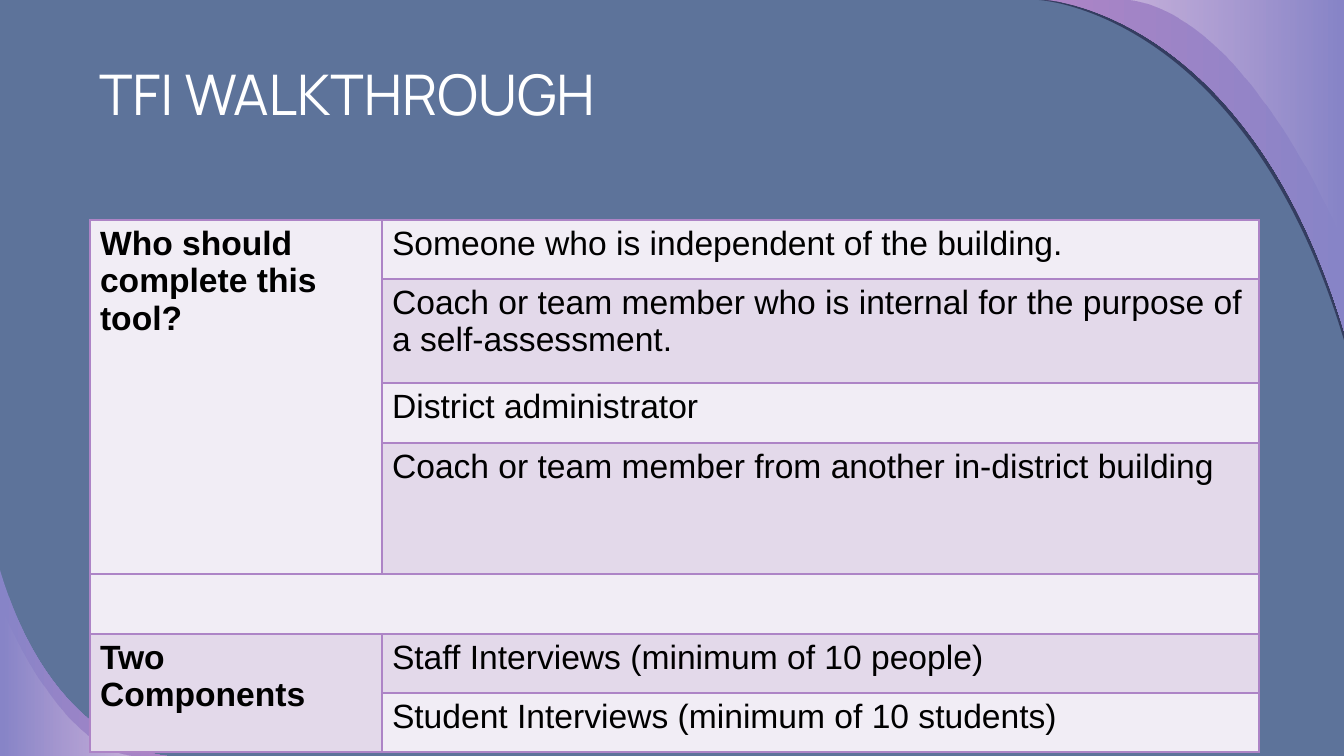
"""Build the TFI walkthrough slide: curved corner wings, a title and a merged table."""
from dataclasses import dataclass

import lxml.etree
import pptx
import pptx.dml.color
import pptx.enum.text
import pptx.oxml.ns
import pptx.shapes.autoshape
import pptx.slide
import pptx.table
import pptx.text.text
import pptx.util

RGBColor = pptx.dml.color.RGBColor
Point = tuple[int, int]

EMU_PER_PX = 914400 / 100.8
PAGE_WIDTH, PAGE_HEIGHT = 1344, 756

SLATE = RGBColor(0x5D, 0x73, 0x9A)
NAVY = RGBColor(0x12, 0x10, 0x2F)
PERIWINKLE = RGBColor(0x87, 0x84, 0xC7)
ORCHID = RGBColor(0xAD, 0x84, 0xC6)
WHITE = RGBColor(0xFF, 0xFF, 0xFF)
BLACK = RGBColor(0x00, 0x00, 0x00)
PALE = RGBColor(0xF1, 0xED, 0xF5)
LILAC = RGBColor(0xE3, 0xD9, 0xEA)


@dataclass(frozen=True)
class Stop:
    color: RGBColor
    opacity: int = 100


@dataclass(frozen=True)
class Wing:
    curve: tuple[Point, Point, Point, Point]
    corner: Point
    stops: tuple[Stop, ...]


@dataclass(frozen=True)
class Entry:
    row: int
    column: int
    text: str = ""
    bold: bool = False
    last_row: int = 0
    last_column: int = 0


TOP_RIGHT: Point = (PAGE_WIDTH, 0)
BOTTOM_LEFT: Point = (0, PAGE_HEIGHT)
BLUE_TO_PURPLE = (Stop(PERIWINKLE), Stop(ORCHID))
SHEEN = (Stop(WHITE, 0), Stop(WHITE, 36))

WINGS = (
    Wing(((1344, 340), (1245, 11), (1039, 0), (1039, 0)), TOP_RIGHT, (Stop(NAVY, 54),)),
    Wing(((1046, 0), (1046, 0), (1248, 11), (1344, 331)), TOP_RIGHT, BLUE_TO_PURPLE[::-1]),
    Wing(((1344, 246), (1344, 246), (1252, 15), (1127, 0)), TOP_RIGHT, SHEEN[::-1]),
    Wing(((167, 756), (167, 756), (54, 750), (0, 570)), BOTTOM_LEFT, BLUE_TO_PURPLE),
    Wing(((0, 606), (0, 606), (56, 747), (133, 756)), BOTTOM_LEFT, SHEEN),
)

COLUMN_WIDTHS = (292, 877)
ROW_HEIGHTS = (59, 104, 60, 59, 60, 59, 59)
ENTRIES = (
    Entry(0, 0, "Who should complete this tool?", bold=True, last_row=3),
    Entry(0, 1, "Someone who is independent of the building."),
    Entry(1, 1, "Coach or team member who is internal for the purpose of a self-assessment."),
    Entry(2, 1, "District administrator"),
    Entry(3, 1, "Coach or team member from another in-district building"),
    Entry(4, 0, last_column=1),
    Entry(5, 0, "Two Components", bold=True, last_row=6),
    Entry(5, 1, "Staff Interviews (minimum of 10 people)"),
    Entry(6, 1, "Student Interviews (minimum of 10 students)"),
)


def px(length: float) -> pptx.util.Emu:
    """Turn a length in px into EMU."""
    return pptx.util.Emu(round(length * EMU_PER_PX))


def paint(shape: pptx.shapes.autoshape.Shape, stops: tuple[Stop, ...]) -> None:
    """Fill a shape with one colour or a two-stop gradient."""
    if len(stops) == 1:
        shape.fill.solid()
        shape.fill.fore_color.rgb = stops[0].color
    else:
        shape.fill.gradient()
        shape.fill.gradient_angle = 0
        for target, stop in zip(shape.fill.gradient_stops, stops):
            target.color.rgb = stop.color
    tags = list(shape.element.iter(pptx.oxml.ns.qn("a:srgbClr")))
    for tag, stop in zip(tags, stops):
        if stop.opacity < 100:
            alpha = lxml.etree.SubElement(tag, pptx.oxml.ns.qn("a:alpha"))
            alpha.set("val", str(stop.opacity * 1000))


def bend(shape: pptx.shapes.autoshape.Shape) -> None:
    """Join the first three segments of an outline into one cubic curve."""
    segments = list(shape.element.iter(pptx.oxml.ns.qn("a:lnTo")))[:3]
    curve = lxml.etree.Element(pptx.oxml.ns.qn("a:cubicBezTo"))
    segments[0].addprevious(curve)
    for segment in segments:
        curve.append(segment[0])
        segment.getparent().remove(segment)


def draw_wing(page: pptx.slide.Slide, wing: Wing) -> None:
    """Draw one curved corner wing."""
    start, *others = [(px(x), px(y)) for x, y in (*wing.curve, wing.corner)]
    builder = page.shapes.build_freeform(*start)
    builder.add_line_segments(others, close=True)
    shape = builder.convert_to_shape()
    bend(shape)
    shape.shadow.inherit = False
    paint(shape, wing.stops)
    shape.line.fill.background()


def write(frame: pptx.text.text.TextFrame, text: str, size: int, font: str,
          color: RGBColor, bold: bool = False) -> None:
    """Write one run into the first paragraph of a frame."""
    span = frame.paragraphs[0].add_run()
    span.text = text
    span.font.size = pptx.util.Pt(size)
    span.font.name = font
    span.font.bold = bold
    span.font.color.rgb = color


def draw_title(page: pptx.slide.Slide) -> None:
    """Draw the slide title."""
    box = page.shapes.add_textbox(px(89), px(51), px(1034), px(93))
    frame = box.text_frame
    frame.word_wrap = True
    frame.vertical_anchor = pptx.enum.text.MSO_ANCHOR.MIDDLE
    frame.margin_left = frame.margin_right = px(10)
    frame.margin_top = frame.margin_bottom = px(10)
    frame.paragraphs[0].line_spacing = 0.9
    write(frame, "TFI WALKTHROUGH", 40, "Manrope", WHITE)


def style_cell(cell: pptx.table._Cell, fill: RGBColor) -> None:
    """Fill a cell and rule its four sides."""
    cell.fill.solid()
    cell.fill.fore_color.rgb = fill
    properties = cell._tc.get_or_add_tcPr()
    for index, side in enumerate(("a:lnL", "a:lnR", "a:lnT", "a:lnB")):
        line = lxml.etree.Element(pptx.oxml.ns.qn(side), w=str(pptx.util.Pt(1)))
        solid = lxml.etree.SubElement(line, pptx.oxml.ns.qn("a:solidFill"))
        lxml.etree.SubElement(solid, pptx.oxml.ns.qn("a:srgbClr"), val=str(ORCHID))
        properties.insert(index, line)


def draw_table(page: pptx.slide.Slide) -> None:
    """Draw the table of assessors and components."""
    table = page.shapes.add_table(
        len(ROW_HEIGHTS), len(COLUMN_WIDTHS), px(90), px(220),
        px(sum(COLUMN_WIDTHS)), px(sum(ROW_HEIGHTS))).table
    table.first_row = table.horz_banding = False
    for column, width in zip(table.columns, COLUMN_WIDTHS):
        column.width = px(width)
    for row, height in zip(table.rows, ROW_HEIGHTS):
        row.height = px(height)
    for entry in ENTRIES:
        fill = LILAC if entry.row % 2 else PALE
        last_row = max(entry.row, entry.last_row)
        last_column = max(entry.column, entry.last_column)
        for row in range(entry.row, last_row + 1):
            for column in range(entry.column, last_column + 1):
                style_cell(table.cell(row, column), fill)
        cell = table.cell(entry.row, entry.column)
        if (last_row, last_column) != (entry.row, entry.column):
            cell.merge(table.cell(last_row, last_column))
        if entry.text:
            write(cell.text_frame, entry.text, 24, "Arial", BLACK, entry.bold)


def main() -> None:
    """Build and save the deck."""
    deck = pptx.Presentation()
    deck.slide_width, deck.slide_height = px(PAGE_WIDTH), px(PAGE_HEIGHT)
    page = deck.slides.add_slide(deck.slide_layouts[6])
    page.background.fill.solid()
    page.background.fill.fore_color.rgb = SLATE
    for wing in WINGS:
        draw_wing(page, wing)
    draw_title(page)
    draw_table(page)
    deck.save("out.pptx")


if __name__ == "__main__":
    main()
